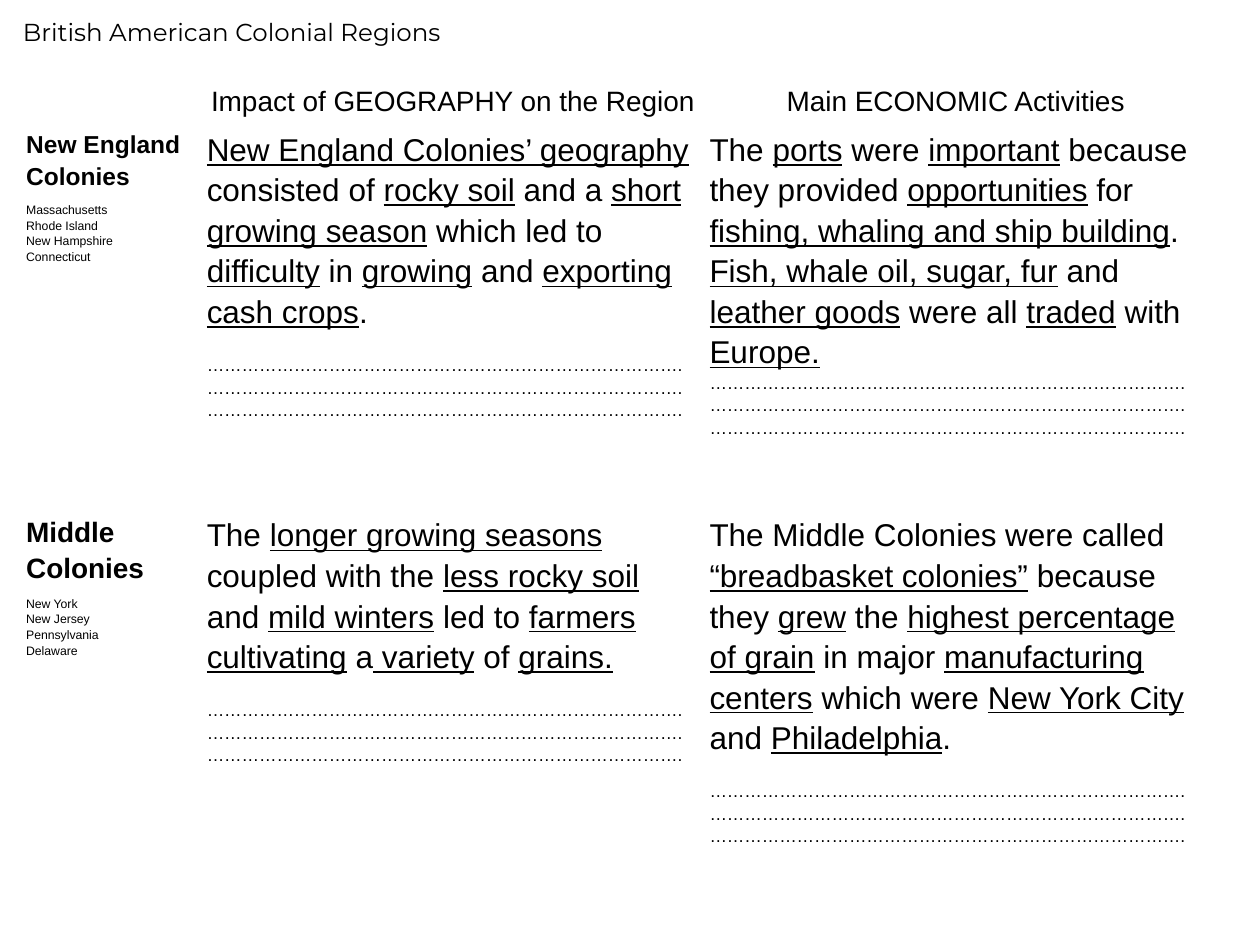
from lxml import etree
from pptx import Presentation
from pptx import util as u
from pptx.dml.color import RGBColor
from pptx.enum import text
from pptx.oxml.ns import qn

Pt = u.Pt
INK = {"black": "000000"}
DOTS = "………………………………………………………………………."


def add(para, words, size, face="Arial", bold=False):
    """Add runs; the parts between underscores are underlined."""
    for i, part in enumerate(words.split("_")):
        if part:
            run = para.add_run()
            run.text = part
            font = run.font
            font.size, font.name, font.bold = Pt(size), face, bold
            font.underline = i % 2 == 1
            font.color.rgb = RGBColor.from_string(INK["black"])


def fill(cell, lines):
    """Write (words, size, bold, before, after) lines into a cell."""
    for i, (words, size, bold, before, after) in enumerate(lines):
        frame = cell.text_frame
        para = frame.add_paragraph() if i else frame.paragraphs[0]
        para.line_spacing = 1.15
        if before:
            para.space_before = Pt(before)
        if after:
            para.space_after = Pt(after)
        add(para, words, size, bold=bold)


deck = Presentation()
deck.slide_width, deck.slide_height = Pt(720), Pt(540)
slide = deck.slides.add_slide(deck.slide_layouts[6])

# Title
box = slide.shapes.add_textbox(Pt(6), Pt(6), Pt(660), Pt(24.5))
frame = box.text_frame
frame.word_wrap = True
frame.auto_size = text.MSO_AUTO_SIZE.SHAPE_TO_FIT_TEXT
frame.vertical_anchor = text.MSO_ANCHOR.MIDDLE
add(frame.paragraphs[0], "British American Colonial Regions", 14, "Montserrat")

# Table grid, without fills or visible borders
wide, high = [103.2, 287.3, 287.3], [28, 220.4, 236.2]
table = slide.shapes.add_table(3, 3, Pt(12), Pt(41.8), Pt(sum(wide)), Pt(sum(high))).table
table.first_row = table.horz_banding = False
for col, size in zip(table.columns, wide):
    col.width = Pt(size)
for row, size in zip(table.rows, high):
    row.height = Pt(size)
for cell in table.iter_cells():
    cell.margin_left = cell.margin_right = Pt(3)
    cell.margin_top = cell.margin_bottom = Pt(3)
    props = cell._tc.get_or_add_tcPr()
    for side in ("a:lnL", "a:lnR", "a:lnT", "a:lnB"):
        line = etree.SubElement(props, qn(side), w=str(Pt(0.75)))
        etree.SubElement(line, qn("a:noFill"))
    cell.fill.background()

# Column heads
heads = ["Impact of GEOGRAPHY on the Region", "Main ECONOMIC Activities"]
for c, head in enumerate(heads, 1):
    cell = table.cell(0, c)
    cell.vertical_anchor = text.MSO_ANCHOR.BOTTOM
    fill(cell, [(head, 16, False, 0, 0)])
    cell.text_frame.paragraphs[0].alignment = text.PP_ALIGN.CENTER

# Regions: name, name size, colonies, then (notes, gap above the dotted lines)
regions = [
    ("New England Colonies", 14,
     ["Massachusetts", "Rhode Island", "New Hampshire", "Connecticut"],
     [("_New England Colonies’ geography_ consisted of _rocky soil_ and a "
       "_short growing season_ which led to _difficulty_ in _growing_ and "
       "_exporting cash crops_.", 13),
      ("The _ports_ were _important_ because they provided _opportunities_ for "
       "_fishing, whaling and ship building_. _Fish, whale oil, sugar, fur_ and "
       "_leather goods_ were all _traded_ with _Europe._", 0)]),
    ("Middle Colonies", 16,
     ["New York", "New Jersey", "Pennsylvania", "Delaware"],
     [("The _longer growing seasons_ coupled with the _less rocky soil_ and "
       "_mild winters_ led to _farmers_ _cultivating_ a_ variety_ of _grains._", 13),
      ("The Middle Colonies were called _“breadbasket colonies”_ because they "
       "_grew_ the _highest percentage of grain_ in major _manufacturing centers_ "
       "which were _New York City_ and _Philadelphia_.", 13)]),
]
for r, (name, size, states, notes) in enumerate(regions, 1):
    fill(table.cell(r, 0), [(name, size, True, 0, 6)]
         + [(state, 7, False, 0, 0) for state in states])
    for c, (note, gap) in enumerate(notes, 1):
        fill(table.cell(r, c), [(note, 18, False, 0, 0)]
             + [(DOTS, 10, False, before, 0) for before in (gap, 0, 0)])

deck.save("out.pptx")
